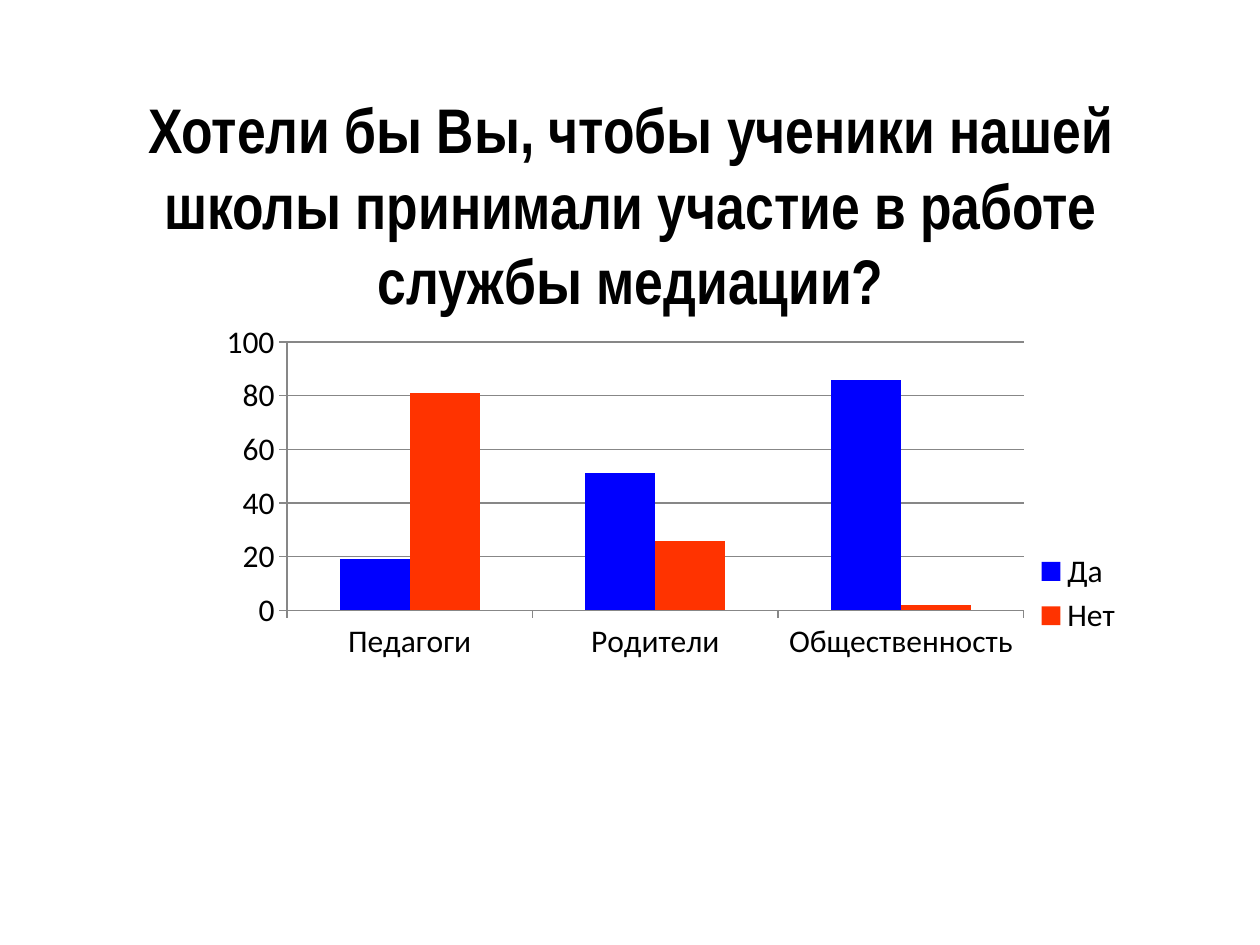
import pptx
import pptx.chart.data
import pptx.dml.color
import pptx.enum.chart
import pptx.enum.text
import pptx.oxml
import pptx.oxml.ns
import pptx.util

Pt = pptx.util.Pt
RGBColor = pptx.dml.color.RGBColor

BLACK = RGBColor(0x00, 0x00, 0x00)
GRAY = RGBColor(0x87, 0x87, 0x87)
BLUE = RGBColor(0x00, 0x00, 0xFF)
ORANGE = RGBColor(0xFF, 0x33, 0x00)

TITLE = ("Хотели бы Вы, чтобы ученики нашей школы "
         "принимали участие в работе службы медиации?")
GROUPS = ["Педагоги", "Родители", "Общественность"]
ANSWERS = [
    ("Да", [19, 51, 86], BLUE),
    ("Нет", [81, 26, 2], ORANGE),
]


class SurveySlide:
    title_font = "Arial Narrow"
    chart_font = "Calibri"
    title_size = Pt(36)
    chart_size = Pt(18)

    def __init__(self, presentation):
        self.slide = presentation.slides.add_slide(presentation.slide_layouts[5])

    def add_title(self, text, left, top, width, height):
        title = self.slide.shapes.title
        title.left, title.top = Pt(left), Pt(top)
        title.width, title.height = Pt(width), Pt(height)
        frame = title.text_frame
        frame.word_wrap = True
        frame.auto_size = pptx.enum.text.MSO_AUTO_SIZE.NONE
        frame.vertical_anchor = pptx.enum.text.MSO_ANCHOR.MIDDLE
        paragraph = frame.paragraphs[0]
        paragraph.alignment = pptx.enum.text.PP_ALIGN.CENTER
        run = paragraph.add_run()
        run.text = text
        run.font.name = self.title_font
        run.font.size = self.title_size
        run.font.bold = True
        run.font.color.rgb = BLACK

    def add_column_chart(self, categories, series_rows, left, top, width, height):
        data = pptx.chart.data.CategoryChartData()
        data.categories = categories
        for name, values, _ in series_rows:
            data.add_series(name, values)
        chart = self.slide.shapes.add_chart(
            pptx.enum.chart.XL_CHART_TYPE.COLUMN_CLUSTERED,
            Pt(left), Pt(top), Pt(width), Pt(height), data).chart
        chart.has_title = False
        chart.font.name = self.chart_font
        chart.font.size = self.chart_size
        chart.font.color.rgb = BLACK

        chart.has_legend = True
        chart.legend.position = pptx.enum.chart.XL_LEGEND_POSITION.RIGHT
        chart.legend.include_in_layout = False

        plot = chart.plots[0]
        plot.vary_by_categories = False
        plot.gap_width = 150
        plot.overlap = 0
        for series, (_, _, color) in zip(plot.series, series_rows):
            series.format.fill.solid()
            series.format.fill.fore_color.rgb = color

        for axis in (chart.category_axis, chart.value_axis):
            axis.major_tick_mark = pptx.enum.chart.XL_TICK_MARK.OUTSIDE
            axis.minor_tick_mark = pptx.enum.chart.XL_TICK_MARK.NONE
            self.style_line(axis.format.line)
        value_axis = chart.value_axis
        value_axis.minimum_scale = 0
        value_axis.maximum_scale = 100
        value_axis.major_unit = 20
        value_axis.has_major_gridlines = True
        self.style_line(value_axis.major_gridlines.format.line)
        return chart

    def style_line(self, line):
        line.color.rgb = GRAY
        line.width = Pt(0.75)

    def place_plot(self, chart, x, y, w, h):
        """Fix the inner plot area, given as fractions of the chart frame."""
        plot_area = chart.plots[0]._element.getparent()
        for layout in plot_area.findall(pptx.oxml.ns.qn("c:layout")):
            plot_area.remove(layout)
        edges = "".join(f'<c:{name} val="{value}"/>' for name, value in (
            ("layoutTarget", "inner"), ("xMode", "edge"), ("yMode", "edge"),
            ("x", x), ("y", y), ("w", w), ("h", h)))
        plot_area.insert(0, pptx.oxml.parse_xml(
            f'<c:layout {pptx.oxml.ns.nsdecls("c")}>'
            f'<c:manualLayout>{edges}</c:manualLayout></c:layout>'))


def main():
    presentation = pptx.Presentation()
    presentation.slide_width = Pt(720)
    presentation.slide_height = Pt(540)
    survey = SurveySlide(presentation)
    survey.add_title(TITLE, 36.5, 71.5, 648, 90)
    chart = survey.add_column_chart(GROUPS, ANSWERS, 116, 179.5, 533, 319.5)
    survey.place_plot(chart, 0.09, 0.05, 0.79, 0.48)
    presentation.save("out.pptx")


if __name__ == "__main__":
    main()
